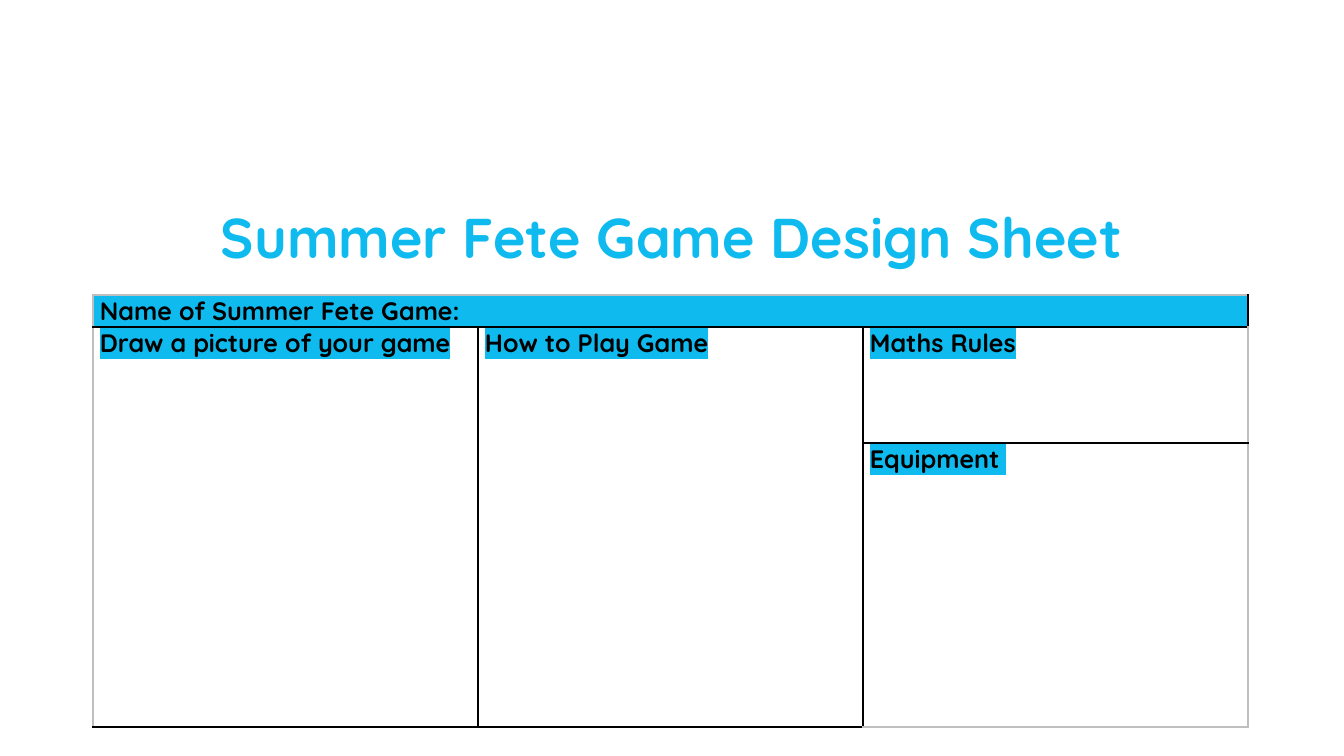
from lxml.etree import SubElement
from pptx import Presentation
from pptx.dml.color import RGBColor
from pptx.enum.text import MSO_ANCHOR, PP_ALIGN
from pptx.oxml.ns import qn
from pptx.util import Pt

PX = 914400 / 100.8
BLUE, BLACK, GREY = "0FBAEF", "000000", "BFBFBF"


def px(length):
    return round(length * PX)


def style(font, size, color):
    font.name = "Quicksand"
    font.size = Pt(size)
    font.bold = True
    font.color.rgb = RGBColor.from_string(color)


deck = Presentation()
deck.slide_width, deck.slide_height = px(1344), px(756)
page = deck.slides.add_slide(deck.slide_layouts[6])

title = page.shapes.add_textbox(px(92), px(207), px(1159), px(66)).text_frame
title.word_wrap = True
title.vertical_anchor = MSO_ANCHOR.MIDDLE
para = title.paragraphs[0]
para.text = "Summer Fete Game Design Sheet"
para.alignment = PP_ALIGN.CENTER
para.line_spacing = 0.9
style(para.font, 40, BLUE)

row_heights = [32, 116, 284]
column_width = 385
table = page.shapes.add_table(
    3, 3, px(93), px(295), px(3 * column_width), px(sum(row_heights))
).table
table.first_row = table.horz_banding = False
for column in table.columns:
    column.width = px(column_width)
for row, height in zip(table.rows, row_heights):
    row.height = px(height)

for row in range(3):
    for column in range(3):
        cell = table.cell(row, column)
        cell.margin_left = cell.margin_right = px(7)
        cell.margin_top = cell.margin_bottom = 0
        outer_sides = {"L": column == 0, "R": column == 2, "T": row == 0, "B": row == 2}
        for side, is_outer in outer_sides.items():
            line = SubElement(cell._tc.get_or_add_tcPr(), qn(f"a:ln{side}"), w=str(Pt(1)))
            fill = SubElement(line, qn("a:solidFill"))
            SubElement(fill, qn("a:srgbClr"), val=GREY if is_outer else BLACK)
        if row == 0:
            cell.fill.solid()
            cell.fill.fore_color.rgb = RGBColor.from_string(BLUE)
        else:
            cell.fill.background()

table.cell(0, 0).merge(table.cell(0, 2))
for column in range(2):
    table.cell(1, column).merge(table.cell(2, column))

headings = [
    (0, 0, "Name of Summer Fete Game:"),
    (1, 0, "Draw a picture of your game"),
    (1, 1, "How to Play Game"),
    (1, 2, "Maths Rules"),
    (2, 2, "Equipment "),
]
for row, column, text in headings:
    para = table.cell(row, column).text_frame.paragraphs[0]
    span = para.add_run()
    span.text = text
    style(para.font, 18, BLACK)
    if row > 0:
        highlight = SubElement(span._r.get_or_add_rPr(), qn("a:highlight"))
        SubElement(highlight, qn("a:srgbClr"), val=BLUE)

deck.save("out.pptx")
